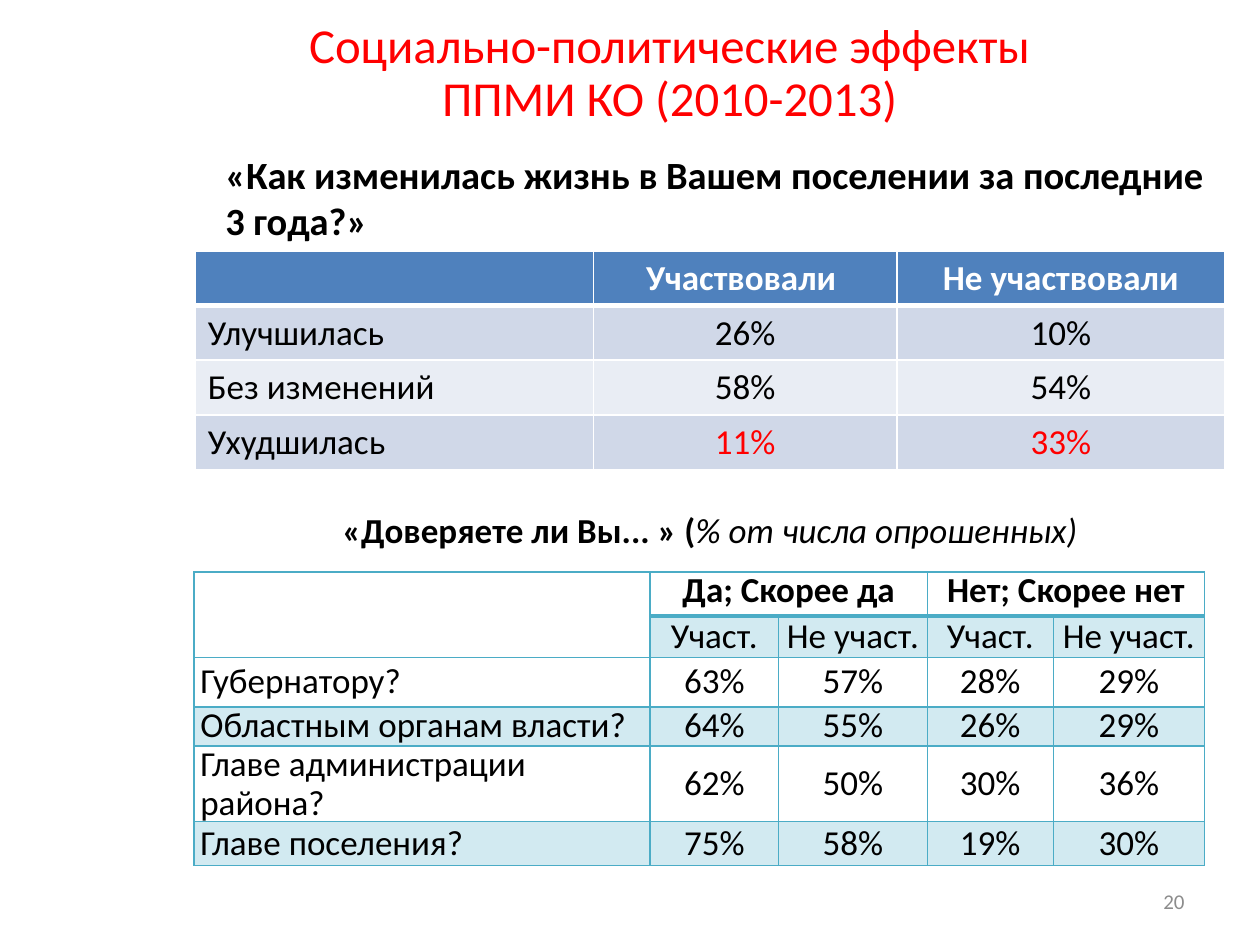
from lxml import etree
from pptx import Presentation, util as u
from pptx.dml.color import RGBColor
from pptx.enum import text
from pptx.oxml.ns import qn

BLACK = RGBColor(0x00, 0x00, 0x00)
WHITE = RGBColor(0xFF, 0xFF, 0xFF)
RED = RGBColor(0xFF, 0x00, 0x00)
GREY = RGBColor(0x8C, 0x8C, 0x8C)
BLUE = RGBColor(0x4F, 0x81, 0xBD)
PALE = RGBColor(0xD0, 0xD8, 0xE8)
MIST = RGBColor(0xE9, 0xED, 0xF4)
TEAL = RGBColor(0x4B, 0xAC, 0xC6)
AQUA = RGBColor(0xD2, 0xEA, 0xF1)

LEFT, MID, RIGHT = text.PP_ALIGN.LEFT, text.PP_ALIGN.CENTER, text.PP_ALIGN.RIGHT
TOP, CENTRE = text.MSO_ANCHOR.TOP, text.MSO_ANCHOR.MIDDLE

# Content: text boxes as (box, runs, alignment, anchor, line spacing)
NOTES = [
    ((1.93, 0.21, 6.77, 0.76),
     [("Социально-политические эффекты ППМИ КО (2010-2013)", dict(size=27.9, color=RED))],
     MID, CENTRE, 0.9),
    ((1.69, 1.15, 8.11, 0.84),
     [("«Как изменилась жизнь в Вашем поселении за последние 3 года?»",
       dict(size=22, bold=True))],
     LEFT, TOP, 1),
    ((1.46, 3.99, 8.35, 0.44),
     [("«Доверяете ли Вы... » (", dict(bold=True)),
      ("% от числа опрошенных)", dict(italic=True))],
     MID, TOP, 1),
    ((7.17, 6.95, 2.33, 0.4), [("20", dict(size=12, color=GREY))], RIGHT, CENTRE, 1),
]

LIFE = [
    ("", "Участвовали ", "Не участвовали"),
    ("Улучшилась", "26%", "10%"),
    ("Без изменений", "58%", "54%"),
    ("Ухудшилась", "11%", "33%"),
]

TRUST = [
    ("", "Да; Скорее да", "", "Нет; Скорее нет", ""),
    ("", "Участ.", "Не участ.", "Участ.", "Не участ."),
    ("Губернатору?", "63%", "57%", "28%", "29%"),
    ("Областным органам власти?", "64%", "55%", "26%", "29%"),
    ("Главе администрации района?", "62%", "50%", "30%", "36%"),
    ("Главе поселения?", "75%", "58%", "19%", "30%"),
]


def write(par, runs, align, gap):
    par.alignment, par.line_spacing = align, gap
    for words, style in runs:
        run = par.add_run()
        run.text = words
        look = dict(name="Calibri", size=20, bold=False, color=BLACK) | style
        run.font.color.rgb = look.pop("color")
        look["size"] = u.Pt(look["size"])
        for key, value in look.items():
            setattr(run.font, key, value)


def edge(cell, color, widths):
    """Draw the cell borders; widths maps L, R, T, B to points."""
    props = cell._tc.get_or_add_tcPr()
    for side, width in widths.items():
        line = etree.SubElement(props, qn("a:ln" + side), w=str(u.Pt(width)))
        fill = etree.SubElement(line, qn("a:solidFill"))
        etree.SubElement(fill, qn("a:srgbClr"), val=str(color))


def grid(slide, at, cols, rows, data, line, style):
    """Add a table; style(r, c) gives font, fill, anchor and border widths."""
    box = [u.Inches(n) for n in (*at, sum(cols), sum(rows))]
    table = slide.shapes.add_table(len(rows), len(cols), *box).table
    table.first_row = table.horz_banding = False
    for part, sizes in ((table.columns, cols), (table.rows, rows)):
        for item, size in zip(part, sizes):
            if part is table.columns:
                item.width = u.Inches(size)
            else:
                item.height = u.Inches(size)
    for r, row in enumerate(data):
        for c, words in enumerate(row):
            cell = table.cell(r, c)
            font, fill, anchor, gap, pads, widths = style(r, c)
            edge(cell, line, dict(L=1, R=1, T=1, B=1) | widths)
            if fill is None:
                cell.fill.background()
            else:
                cell.fill.solid()
                cell.fill.fore_color.rgb = fill
            cell.vertical_anchor = anchor
            for side, pad in zip(("left", "right", "top", "bottom"), pads):
                setattr(cell, "margin_" + side, u.Inches(pad))
            if words:
                write(cell.text_frame.paragraphs[0], [(words, font)],
                      MID if c or r == 0 else LEFT, gap)
    return table


def life_style(r, c):
    pads = (0.1, 0.1, 0.05, 0.05)
    if r == 0:
        return dict(bold=True, color=WHITE), BLUE, TOP, 1, pads, dict(B=3)
    font = dict(color=RED) if r == 3 and c else {}
    return font, PALE if r % 2 else MIST, TOP, 1, pads, dict(T=3) if r == 1 else {}


def trust_style(r, c):
    heavy = {0: dict(B=2.25), 1: dict(T=2.25)}.get(r, {}) if c else {}
    fill = AQUA if r % 2 and (r > 1 or c) else None
    return (dict(bold=r == 0), fill, CENTRE if r else TOP, 0.9,
            (0.05, 0.05, 0, 0), heavy)


def main():
    deck = Presentation()
    deck.slide_width, deck.slide_height = u.Inches(10), u.Inches(7.5)
    slide = deck.slides.add_slide(deck.slide_layouts[6])

    # Headings and page number
    for box, runs, align, anchor, gap in NOTES:
        frame = slide.shapes.add_textbox(*[u.Inches(n) for n in box]).text_frame
        frame.word_wrap, frame.vertical_anchor = True, anchor
        write(frame.paragraphs[0], runs, align, gap)

    # How life has changed
    grid(slide, (1.55, 1.99), (3.16, 2.41, 2.6), [0.43] * 4, LIFE, WHITE, life_style)

    # Trust in the authorities, with a two-level header
    trust = grid(slide, (1.54, 4.54), (3.62, 1.02, 1.18, 1, 1.2),
                 (0.35, 0.33, 0.39, 0.31, 0.6, 0.35), TRUST, TEAL, trust_style)
    for start, end in (((0, 0), (1, 0)), ((0, 1), (0, 2)), ((0, 3), (0, 4))):
        trust.cell(*start).merge(trust.cell(*end))

    deck.save("out.pptx")


if __name__ == "__main__":
    main()
